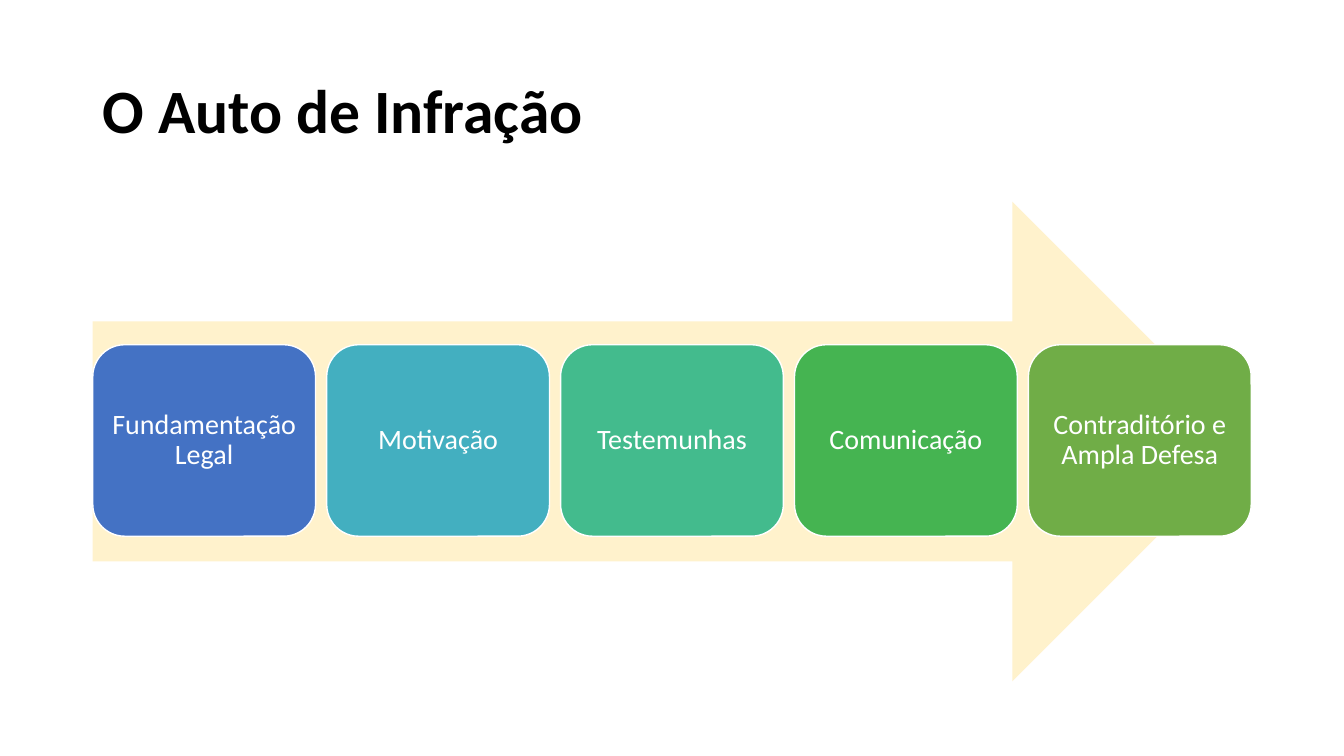
from pptx import Presentation
from pptx.dml.color import RGBColor
from pptx.enum.shapes import MSO_SHAPE
from pptx.enum.text import MSO_ANCHOR, PP_ALIGN
from pptx.util import Inches, Pt

ARROW = MSO_SHAPE.RIGHT_ARROW
ROUND = MSO_SHAPE.ROUNDED_RECTANGLE
MIDDLE = MSO_ANCHOR.MIDDLE
LEFT, CENTER = PP_ALIGN.LEFT, PP_ALIGN.CENTER

FONT = "Calibri"
MARGIN = 0.92
WIDTH = 11.5
STEP_GAP = 2.32
STEPS = [
    ("Fundamentação Legal", "4472C4"),
    ("Motivação", "43AFC0"),
    ("Testemunhas", "43BB8D"),
    ("Comunicação", "45B451"),
    ("Contraditório e Ampla Defesa", "70AD47"),
]


def color(code):
    return RGBColor.from_string(code)


def set_text(shape, text, size, code, align, bold=False):
    frame = shape.text_frame
    frame.word_wrap = True
    frame.vertical_anchor = MIDDLE
    frame.text = text
    para = frame.paragraphs[0]
    para.alignment = align
    para.line_spacing = 0.9
    font = para.runs[0].font
    font.name = FONT
    font.size = Pt(size)
    font.bold = bold
    font.color.rgb = color(code)


def add_title(slide, text):
    box = slide.shapes.add_textbox(
        Inches(MARGIN), Inches(0.4), Inches(WIDTH), Inches(1.45))
    set_text(box, text, 44, "000000", LEFT, bold=True)


def add_block(slide, kind, left, top, width, height, fill):
    """Add a filled preset shape without shadow or outline."""
    block = slide.shapes.add_shape(
        kind, Inches(left), Inches(top), Inches(width), Inches(height))
    block.shadow.inherit = False
    block.fill.solid()
    block.fill.fore_color.rgb = color(fill)
    block.line.fill.background()
    return block


def add_step(slide, left, text, fill):
    step = add_block(slide, ROUND, left, 3.42, 2.21, 1.9, fill)
    step.line.color.rgb = color("FFFFFF")
    step.line.width = Pt(1)
    frame = step.text_frame
    frame.margin_left = frame.margin_right = Inches(0.08)
    frame.margin_top = frame.margin_bottom = Inches(0.08)
    set_text(step, text, 20, "FFFFFF", CENTER)


def main():
    deck = Presentation()
    deck.slide_width, deck.slide_height = Inches(13.33), Inches(7.5)
    slide = deck.slides.add_slide(deck.slide_layouts[6])
    add_title(slide, "O Auto de Infração")
    add_block(slide, ARROW, MARGIN, 2, WIDTH, 4.76, "FFF2CC")
    for i, (text, fill) in enumerate(STEPS):
        add_step(slide, MARGIN + i * STEP_GAP, text, fill)
    deck.save("out.pptx")


if __name__ == "__main__":
    main()
